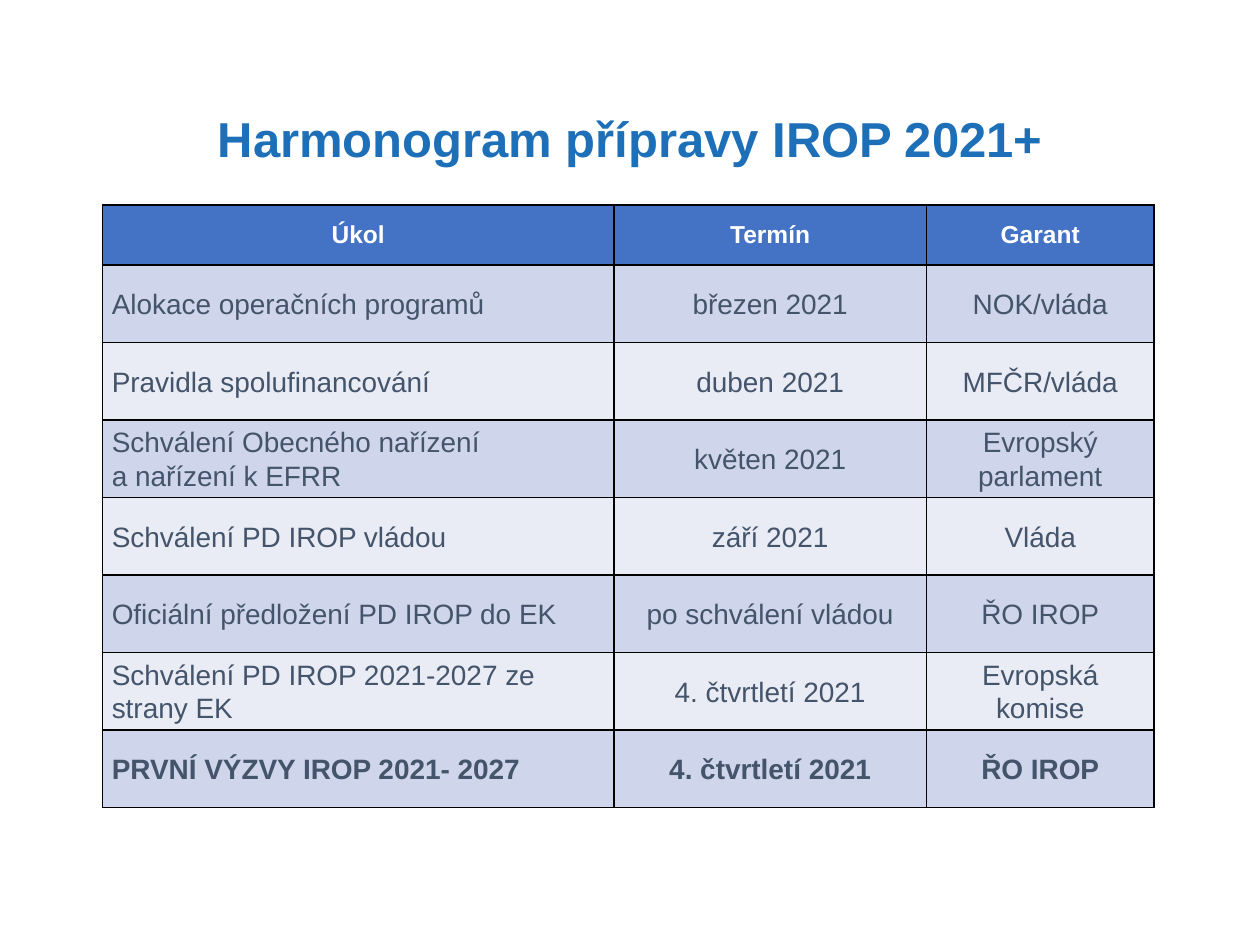
import pptx
import pptx.util
import pptx.dml.color
import pptx.enum.text
import pptx.oxml
import pptx.oxml.ns
import lxml.etree

Pt = pptx.util.Pt
ALIGN = pptx.enum.text.PP_ALIGN
MIDDLE = pptx.enum.text.MSO_ANCHOR.MIDDLE
qn = pptx.oxml.ns.qn


def color(value):
    return pptx.dml.color.RGBColor.from_string(value)


def format_text(text_frame, alignment, line_spacing, size, text_color, bold):
    for paragraph in text_frame.paragraphs:
        for name, value in {"alignment": alignment, "line_spacing": line_spacing}.items():
            setattr(paragraph, name, value)
        for run in paragraph.runs:
            for name, value in {"name": "Arial", "size": Pt(size), "bold": bold}.items():
                setattr(run.font, name, value)
            run.font.color.rgb = color(text_color)
        # A line break keeps the text size of its paragraph
        for line_break in paragraph._p.findall(qn("a:br")):
            lxml.etree.SubElement(line_break, qn("a:rPr"), sz=str(size * 100))


presentation = pptx.Presentation()
presentation.slide_width, presentation.slide_height = Pt(720), Pt(540)
slide = presentation.slides.add_slide(presentation.slide_layouts[5])

# Title
title = slide.shapes.title
for name, value in {"left": 49.5, "top": 28.75, "width": 621, "height": 104.4}.items():
    setattr(title, name, Pt(value))
title.text_frame.text = "Harmonogram přípravy IROP 2021+"
for name, value in {"vertical_anchor": MIDDLE, "word_wrap": True,
                    "auto_size": pptx.enum.text.MSO_AUTO_SIZE.NONE}.items():
    setattr(title.text_frame, name, value)
format_text(title.text_frame, ALIGN.CENTER, 0.9, 28, "1D70B8", True)

# Schedule table
schedule = [
    ("Úkol", "Termín", "Garant"),
    ("Alokace operačních programů", "březen 2021", "NOK/vláda"),
    ("Pravidla spolufinancování", "duben 2021", "MFČR/vláda"),
    ("Schválení Obecného nařízení \va nařízení k EFRR", "květen 2021", "Evropský parlament"),
    ("Schválení PD IROP vládou", "září 2021", "Vláda"),
    ("Oficiální předložení PD IROP do EK", "po schválení vládou", "ŘO IROP"),
    ("Schválení PD IROP 2021-2027 ze strany EK", "4. čtvrtletí 2021", "Evropská komise"),
    ("PRVNÍ VÝZVY IROP 2021- 2027", "4. čtvrtletí 2021", "ŘO IROP"),
]
column_widths = [292.4, 178.4, 130.3]
header_height, row_height = 34.3, 44.3
last_row = len(schedule) - 1
table = slide.shapes.add_table(
    len(schedule), len(column_widths), Pt(58.5), Pt(117.2),
    Pt(sum(column_widths)), Pt(header_height + last_row * row_height)).table
for column, width in zip(table.columns, column_widths):
    column.width = Pt(width)

for row_index, texts in enumerate(schedule):
    is_header = row_index == 0
    table.rows[row_index].height = Pt(header_height if is_header else row_height)
    for column_index, text in enumerate(texts):
        cell = table.cell(row_index, column_index)
        cell.text_frame.text = text
        cell.vertical_anchor = MIDDLE
        if is_header:
            fill_color = "4472C4"
            format_text(cell.text_frame, ALIGN.CENTER, 1.0, 14, "FFFFFF", True)
        else:
            fill_color = "CFD5EA" if row_index % 2 else "E9EBF5"
            alignment = ALIGN.CENTER if column_index else ALIGN.LEFT
            format_text(cell.text_frame, alignment, 1.07, 16, "44546A", row_index == last_row)
            for side, margin in {"left": 5.4, "right": 5.4, "top": 0, "bottom": 0}.items():
                setattr(cell, "margin_" + side, Pt(margin))

        # Borders come before the fill in the cell properties
        properties = cell._tc.get_or_add_tcPr()
        for tag in ("a:lnL", "a:lnR", "a:lnT", "a:lnB"):
            line = lxml.etree.SubElement(properties, qn(tag), w=str(Pt(1)))
            line_fill = lxml.etree.SubElement(line, qn("a:solidFill"))
            lxml.etree.SubElement(line_fill, qn("a:srgbClr"), val="000000")
        cell.fill.solid()
        cell.fill.fore_color.rgb = color(fill_color)

presentation.save("out.pptx")
